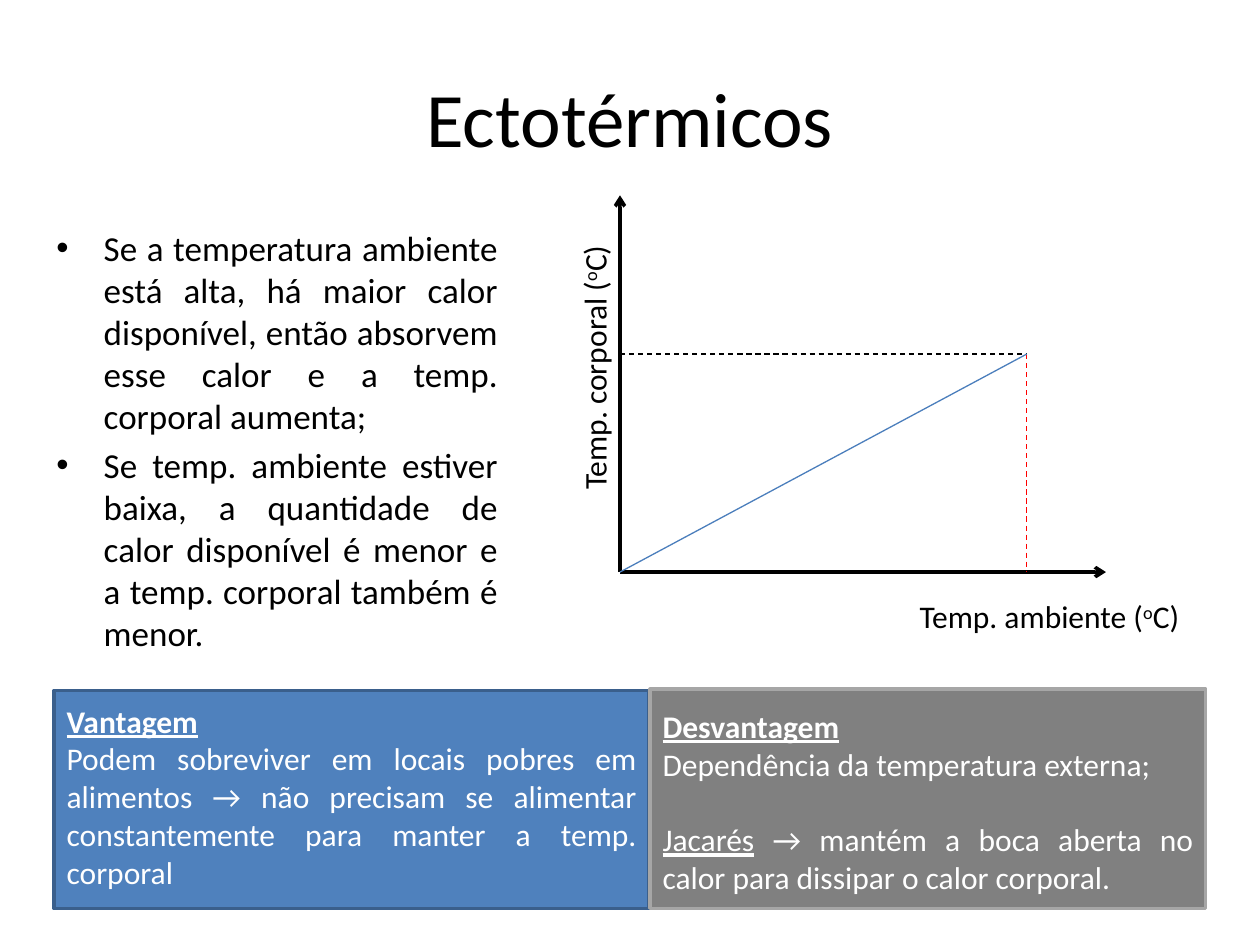
import pptx
import pptx.util
import pptx.dml.color
import pptx.enum.dml
import pptx.enum.shapes
import pptx.enum.text
import pptx.oxml.ns
import lxml.etree
from dataclasses import dataclass

Pt = pptx.util.Pt
ALIGN = pptx.enum.text.PP_ALIGN


@dataclass(frozen=True)
class Theme:
    font: str = "Calibri"
    title: int = 44
    body: int = 20
    label: int = 18
    ink: str = "000000"
    paper: str = "FFFFFF"
    trend: str = "4B7EBC"
    guide: str = "FF0000"
    pro: str = "4F81BD"
    pro_edge: str = "3A5F8C"
    con: str = "808080"
    con_edge: str = "A6A6A6"


T = Theme()


def rgb(value):
    return pptx.dml.color.RGBColor.from_string(value)


def sub(parent, tag, **attrs):
    return lxml.etree.SubElement(parent, pptx.oxml.ns.qn(tag), attrs)


def add_text(s, box, paragraphs, size, color=T.ink, align=ALIGN.LEFT):
    sp = s.shapes.add_textbox(*map(Pt, box))
    tf = sp.text_frame
    tf.word_wrap = True
    for i, runs in enumerate(paragraphs):
        p = tf.paragraphs[0] if i == 0 else tf.add_paragraph()
        p.alignment = align
        for text, style in runs:
            r = p.add_run()
            r.text = text
            r.font.name = T.font
            r.font.size = Pt(size)
            r.font.color.rgb = rgb(color)
            r.font.bold = "b" in style
            r.font.underline = "u" in style
            if "^" in style:
                r.font._element.set("baseline", "30000")
    return sp


def add_bullets(s, box, items):
    sp = add_text(s, box, [[(item, "")] for item in items], T.body, align=ALIGN.JUSTIFY)
    for p in sp.text_frame.paragraphs:
        p.space_before = Pt(4)
        pPr = p._p.get_or_add_pPr()
        pPr.set("marL", str(Pt(27)))
        pPr.set("indent", str(-Pt(27)))
        sub(pPr, "a:buFont", typeface="Arial")
        sub(pPr, "a:buChar", char="•")


def add_line(s, start, end, color, width=0.75, dashed=False, arrow=False):
    sp = s.shapes.add_connector(
        pptx.enum.shapes.MSO_CONNECTOR.STRAIGHT, *map(Pt, start + end))
    sp.line.color.rgb = rgb(color)
    sp.line.width = Pt(width)
    if dashed:
        sp.line.dash_style = pptx.enum.dml.MSO_LINE.DASH
    if arrow:
        sub(sp.line._get_or_add_ln(), "a:tailEnd", type="arrow")
    sub(sp._element.spPr, "a:effectLst")


def add_axis_label(s, box, name, rotation=0):
    sp = add_text(s, box, [[(name + " (", ""), ("o", "^"), ("C)", "")]], T.label)
    sp.rotation = rotation


def add_graph(s):
    origin, peak = (354.3, 326.9), (586.8, 202.3)
    add_line(s, origin, (632, origin[1]), T.ink, 2, arrow=True)
    add_line(s, origin, (origin[0], 111.6), T.ink, 2, arrow=True)
    add_axis_label(s, (518.4, 337.7, 181.4, 28.8), "Temp. ambiente")
    add_axis_label(s, (229, 162, 221, 28.8), "Temp. corporal", 270)
    add_line(s, (origin[0], peak[1]), peak, T.ink, dashed=True)
    add_line(s, peak, (peak[0], origin[1]), T.guide, dashed=True)
    add_line(s, origin, peak, T.trend)


def add_panel(s, box, fill, edge, text_top, paragraphs):
    sp = s.shapes.add_shape(pptx.enum.shapes.MSO_SHAPE.RECTANGLE, *map(Pt, box))
    sp.shadow.inherit = False
    sp.fill.solid()
    sp.fill.fore_color.rgb = rgb(fill)
    sp.line.color.rgb = rgb(edge)
    sp.line.width = Pt(2)
    return add_text(s, (box[0], text_top, box[2], 116.6), paragraphs,
                    T.label, T.paper, ALIGN.JUSTIFY)


def main():
    prs = pptx.Presentation()
    prs.slide_width, prs.slide_height = Pt(720), Pt(540)
    s = prs.slides.add_slide(prs.slide_layouts[6])

    title = add_text(s, (36, 21.6, 648, 90), [[("Ectotérmicos", "")]],
                     T.title, align=ALIGN.CENTER)
    title.text_frame.vertical_anchor = pptx.enum.text.MSO_ANCHOR.MIDDLE
    add_bullets(s, (25.2, 126, 266.4, 262.8), [
        "Se a temperatura ambiente está alta, há maior calor disponível, "
        "então absorvem esse calor e a temp. corporal aumenta;",
        "Se temp. ambiente estiver baixa, a quantidade de calor disponível "
        "é menor e a temp. corporal também é menor.",
    ])
    add_graph(s)
    add_panel(s, (31, 394.6, 340, 124.6), T.pro, T.pro_edge, 397.4, [
        [("Vantagem", "bu")],
        [("Podem sobreviver em locais pobres em alimentos → não precisam se "
          "alimentar constantemente para manter a temp. corporal", "")],
    ])
    drawback = add_panel(s, (371.5, 393.8, 317.5, 125.3), T.con, T.con_edge, 400.3, [
        [("Desvantagem", "bu")],
        [("Dependência da temperatura externa;", "")],
        [("Jacarés", "u"),
         (" → mantém a boca aberta no calor para dissipar o calor corporal.", "")],
    ])
    drawback.text_frame.paragraphs[-1].space_before = Pt(21.6)
    prs.save("out.pptx")


if __name__ == "__main__":
    main()
